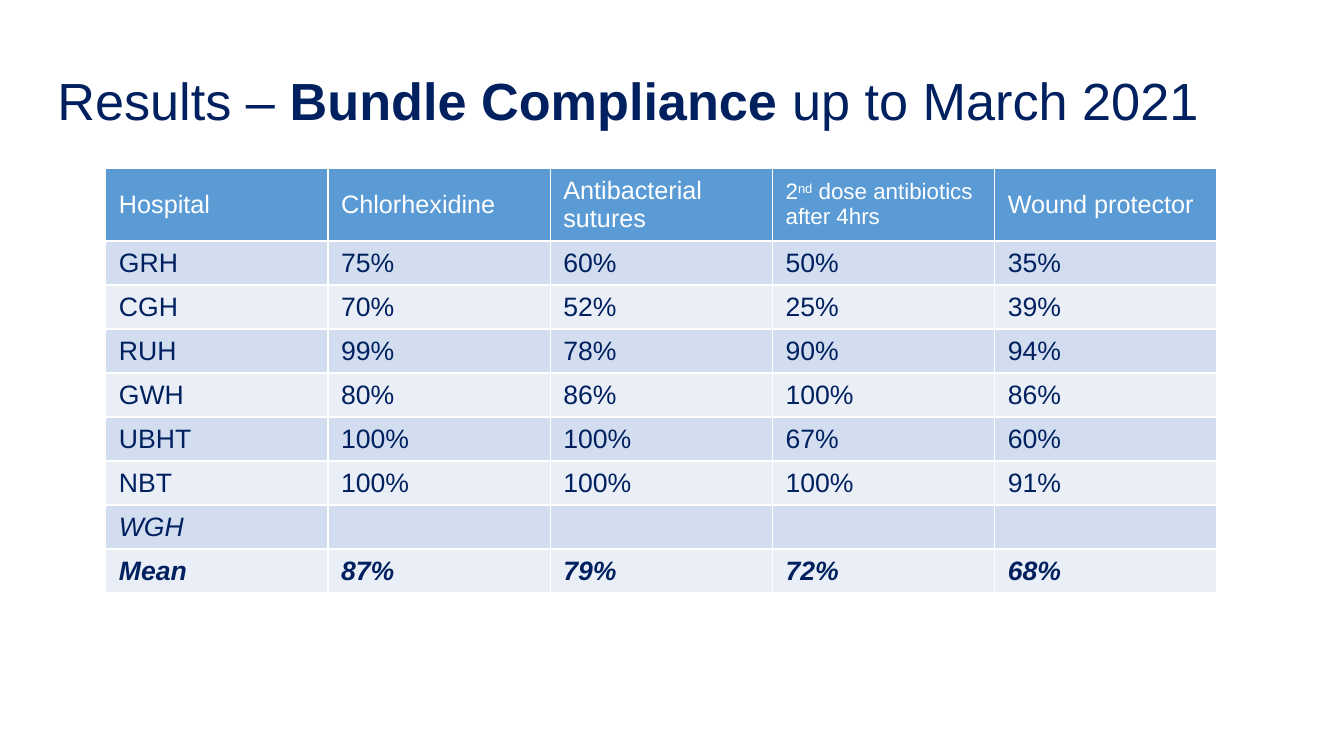
import lxml.etree
import pptx
import pptx.dml.color
import pptx.enum.text
import pptx.oxml.ns
import pptx.util
from pptx.util import Inches

FONT = "Arial"
NAVY = "002060"
WHITE = "FFFFFF"
HEADER_BLUE = "5B9BD5"
BANDS = ["D2DEEF", "EAEFF7"]
HEADER_HEIGHT = 0.69

TITLE = [("Results – ", False), ("Bundle Compliance ", True), ("up to March 2021", False)]
HEADERS = ["Hospital", "Chlorhexidine", "Antibacterial sutures",
           ("2", "nd", " dose antibiotics after 4hrs"), "Wound protector"]
COMPLIANCE = [
    ["GRH", "75%", "60%", "50%", "35%"],
    ["CGH", "70%", "52%", "25%", "39%"],
    ["RUH", "99%", "78%", "90%", "94%"],
    ["GWH", "80%", "86%", "100%", "86%"],
    ["UBHT", "100%", "100%", "67%", "60%"],
    ["NBT", "100%", "100%", "100%", "91%"],
    ["WGH", "", "", "", ""],
    ["Mean", "87%", "79%", "72%", "68%"],
]


def rgb(color):
    return pptx.dml.color.RGBColor.from_string(color)


def style_font(font, size, color, bold=False, italic=False):
    font.name = FONT
    font.size = pptx.util.Pt(size)
    font.color.rgb = rgb(color)
    font.bold = bold
    font.italic = italic


def add_title(slide, left, top, width, height):
    text_box = slide.shapes.add_textbox(Inches(left), Inches(top), Inches(width), Inches(height))
    text_box.text_frame.word_wrap = True
    paragraph = text_box.text_frame.paragraphs[0]
    paragraph.line_spacing = 0.9
    for text, bold in TITLE:
        run = paragraph.add_run()
        run.text = text
        style_font(run.font, 37.3, NAVY, bold)


def add_borders(cell):
    properties = cell._tc.get_or_add_tcPr()
    for side in ("lnL", "lnR", "lnT", "lnB"):
        line = lxml.etree.SubElement(properties, pptx.oxml.ns.qn("a:" + side), w=str(pptx.util.Pt(1)))
        fill = lxml.etree.SubElement(line, pptx.oxml.ns.qn("a:solidFill"))
        lxml.etree.SubElement(fill, pptx.oxml.ns.qn("a:srgbClr"), val=WHITE)


def fill_cell(cell, content, fill, size, color, bold=False, italic=False):
    """Style a cell; content is a text or a (text, superscript, text) triple."""
    cell.vertical_anchor = pptx.enum.text.MSO_ANCHOR.MIDDLE
    cell.margin_left = cell.margin_right = Inches(0.13)
    cell.margin_top = cell.margin_bottom = Inches(0.06)
    add_borders(cell)
    cell.fill.solid()
    cell.fill.fore_color.rgb = rgb(fill)
    paragraph = cell.text_frame.paragraphs[0]
    parts = [content] if isinstance(content, str) else content
    for index, text in enumerate(parts):
        if text:
            run = paragraph.add_run()
            run.text = text
            style_font(run.font, size, color, bold, italic)
            if index == 1:
                run._r.get_or_add_rPr().set("baseline", "30000")


def add_compliance_table(slide, left, top, width, height):
    table = slide.shapes.add_table(len(COMPLIANCE) + 1, len(HEADERS), Inches(left), Inches(top),
                                   Inches(width), Inches(height)).table
    for column in table.columns:
        column.width = Inches(width / len(HEADERS))
    for row in table.rows:
        row.height = Inches((height - HEADER_HEIGHT) / len(COMPLIANCE))
    table.rows[0].height = Inches(HEADER_HEIGHT)

    for column_index, header in enumerate(HEADERS):
        size = 18 if isinstance(header, str) else 16
        fill_cell(table.cell(0, column_index), header, HEADER_BLUE, size, WHITE)
    for row_index, values in enumerate(COMPLIANCE):
        for column_index, value in enumerate(values):
            fill_cell(table.cell(row_index + 1, column_index), value, BANDS[row_index % 2], 19, NAVY,
                      bold=values[0] == "Mean", italic=values[0] in ("WGH", "Mean"))


def main():
    presentation = pptx.Presentation()
    presentation.slide_width = Inches(13.33)
    presentation.slide_height = Inches(7.5)
    slide = presentation.slides.add_slide(presentation.slide_layouts[6])
    add_title(slide, 0.47, 0.7, 12.18, 0.84)
    add_compliance_table(slide, 1.05, 1.67, 11.02, 4.1)
    presentation.save("out.pptx")


if __name__ == "__main__":
    main()
